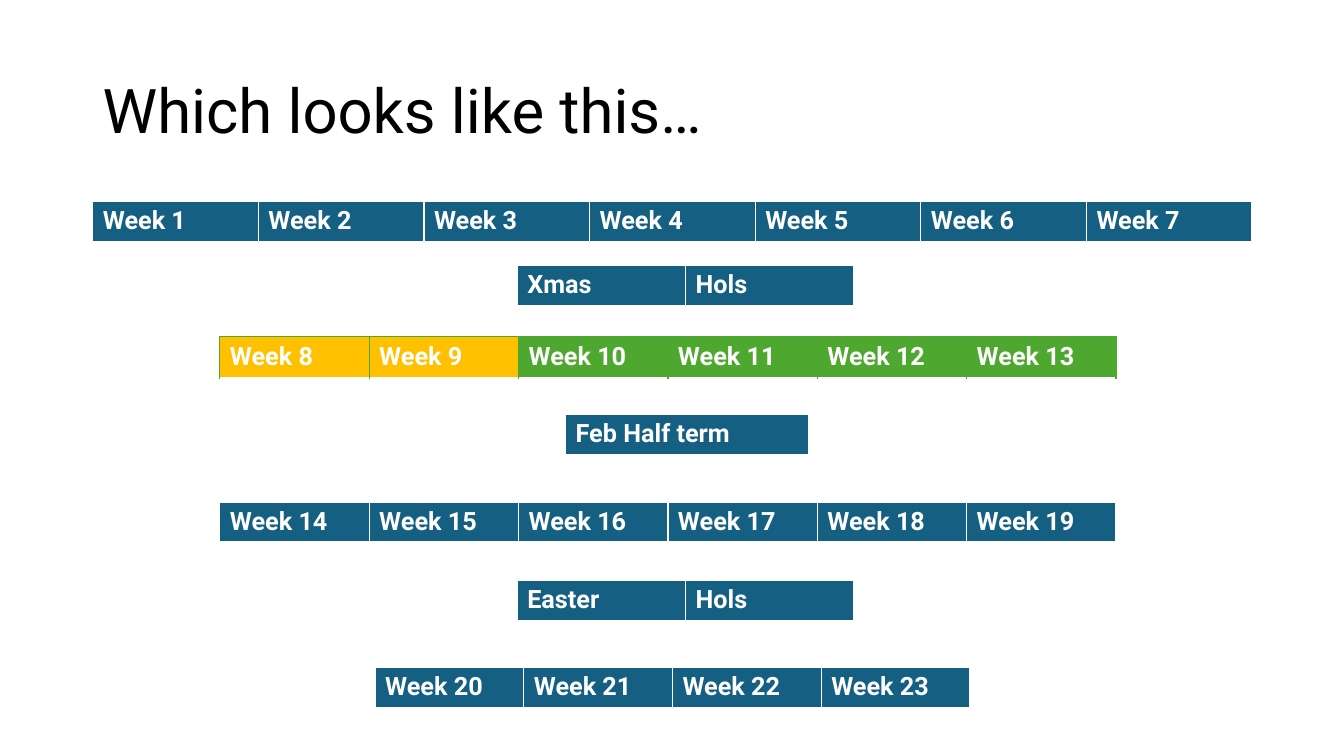
"""Build a slide that lays out the school weeks and holidays as rows of cells."""
import pptx
import pptx.util
import pptx.dml.color
import pptx.enum.text
import pptx.oxml
import pptx.oxml.ns

Inches = pptx.util.Inches
BLUE, GREEN, AMBER, WHITE = "156082", "4EA72E", "FFC000", "FFFFFF"


def add_run(para, text, size, color, bold=False):
    span = para.add_run()
    span.text = text
    span.font.name = "Roboto"
    span.font.size = pptx.util.Pt(size)
    span.font.bold = bold
    span.font.color.rgb = pptx.dml.color.RGBColor.from_string(color)


def add_border(cell, side, color, points):
    line = pptx.oxml.parse_xml(
        f'<a:{side} {pptx.oxml.ns.nsdecls("a")} w="{pptx.util.Pt(points)}">'
        f'<a:solidFill><a:srgbClr val="{color}"/></a:solidFill></a:{side}>'
    )
    cell._tc.get_or_add_tcPr().append(line)


deck = pptx.Presentation()
deck.slide_width = Inches(13.33)
deck.slide_height = Inches(7.5)
page = deck.slides.add_slide(deck.slide_layouts[6])

box = page.shapes.add_textbox(Inches(0.92), Inches(0.4), Inches(11.5), Inches(1.45))
box.text_frame.word_wrap = True
box.text_frame.vertical_anchor = pptx.enum.text.MSO_ANCHOR.MIDDLE
title = box.text_frame.paragraphs[0]
title.line_spacing = 0.9
add_run(title, "Which looks like this…", 44, "000000")

weeks = [f"Week {number}" for number in range(1, 24)]
rows = [
    (0.92, 2, 11.5, weeks[:7], [BLUE] * 7),
    (5.13, 2.63, 3.34, ["Xmas", "Hols"], [BLUE] * 2),
    (2.18, 3.34, 8.89, weeks[7:13], [AMBER] * 2 + [GREEN] * 4),
    (5.61, 4.11, 2.41, ["Feb Half term"], [BLUE]),
    (2.18, 4.98, 8.89, weeks[13:19], [BLUE] * 6),
    (5.13, 5.76, 3.34, ["Easter", "Hols"], [BLUE] * 2),
    (3.72, 6.62, 5.9, weeks[19:], [BLUE] * 4),
]

for left, top, width, labels, fills in rows:
    table = page.shapes.add_table(
        1, len(labels), Inches(left), Inches(top), Inches(width), Inches(0.41)
    ).table
    edge, bottom_width = (GREEN, 1.5) if GREEN in fills else (WHITE, 3)
    for cell, label, fill in zip(table.rows[0].cells, labels, fills):
        add_run(cell.text_frame.paragraphs[0], label, 18, WHITE, bold=True)
        for side in ("lnL", "lnR", "lnT"):
            add_border(cell, side, edge, 1)
        add_border(cell, "lnB", WHITE, bottom_width)
        cell.fill.solid()
        cell.fill.fore_color.rgb = pptx.dml.color.RGBColor.from_string(fill)

deck.save("out.pptx")
